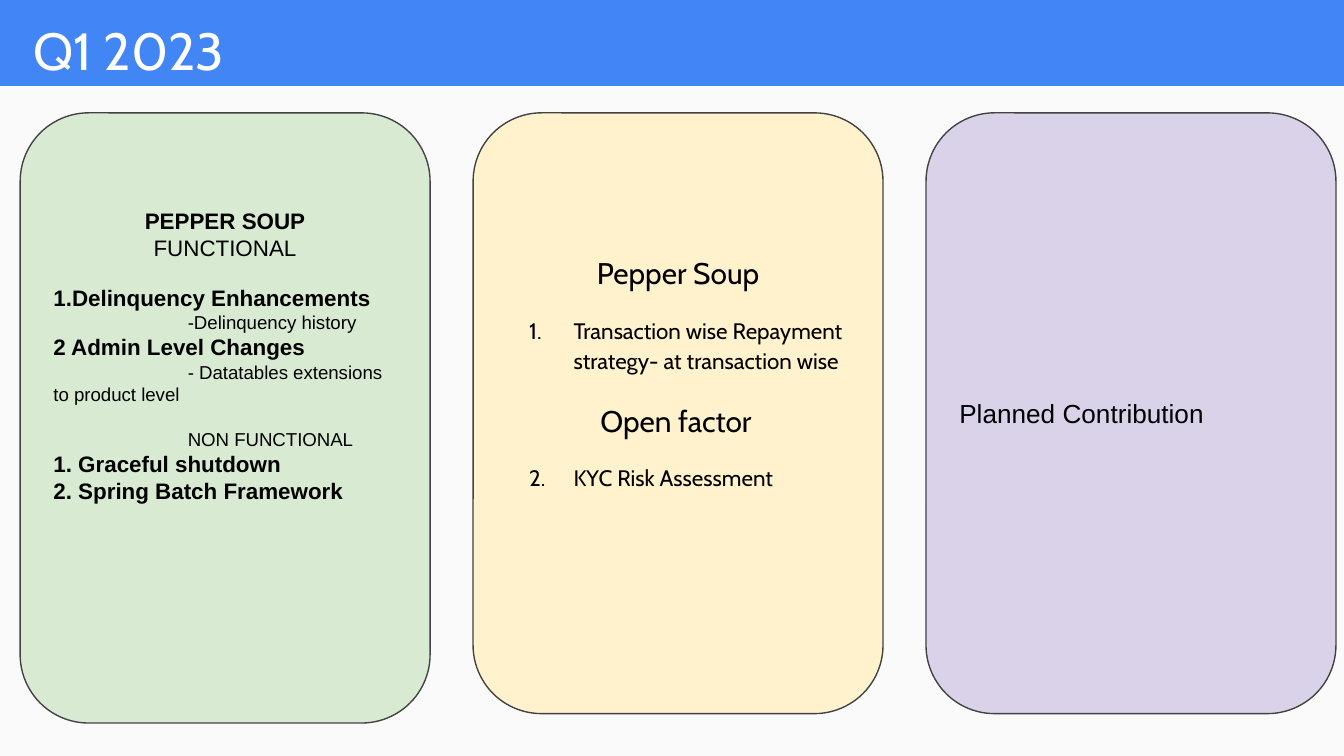
from dataclasses import dataclass

from lxml.etree import SubElement
from pptx import Presentation
from pptx.dml.color import RGBColor
from pptx.enum.shapes import MSO_SHAPE as Shape
from pptx.enum.text import MSO_ANCHOR as Anchor, PP_ALIGN as Align
from pptx.oxml.ns import qn
from pptx.util import Inches, Pt


@dataclass
class Line:
    text: str
    size: float = 12
    bold: bool = False
    font: str = "Arial"
    color: str = "000000"
    align: Align = Align.LEFT
    before: float = 0
    spacing: float = 1.0
    left: float = 0
    first: float = 0
    number: int = 0


def color(value):
    return RGBColor.from_string(value)


def write_lines(shape, lines, anchor, bottom=0.1):
    frame = shape.text_frame
    frame.word_wrap = True
    frame.vertical_anchor = anchor
    frame.margin_left = frame.margin_right = frame.margin_top = Inches(0.1)
    frame.margin_bottom = Inches(bottom)
    for index, line in enumerate(lines):
        paragraph = frame.add_paragraph() if index else frame.paragraphs[0]
        paragraph.alignment = line.align
        paragraph.line_spacing = line.spacing
        paragraph.space_before = Pt(line.before)
        properties = paragraph._p.get_or_add_pPr()
        properties.set("marL", str(Inches(line.left)))
        properties.set("indent", str(Inches(line.first)))
        if line.number:
            SubElement(properties, qn("a:buFont"), typeface="Cabin")
            SubElement(properties, qn("a:buAutoNum"), type="arabicPeriod",
                       startAt=str(line.number))
        run = paragraph.add_run()
        run.text = line.text
        run.font.size = Pt(line.size)
        run.font.bold = line.bold
        run.font.name = line.font
        run.font.color.rgb = color(line.color)


def add_box(slide, kind, box, fill):
    shape = slide.shapes.add_shape(kind, *map(Inches, box))
    shape.shadow.inherit = False
    shape.fill.solid()
    shape.fill.fore_color.rgb = color(fill)
    shape.line.fill.background()
    return shape


def add_backdrop(slide, box):
    # Blue background shows as the header band above the light body
    slide.background.fill.solid()
    slide.background.fill.fore_color.rgb = color("4285F4")
    add_box(slide, Shape.RECTANGLE, box, "FAFAFA")


def add_title(slide, box, text):
    title = slide.shapes.add_textbox(*map(Inches, box))
    write_lines(title, [Line(text, 28, font="Cabin", color="FFFFFF")], Anchor.BOTTOM)


def add_card(slide, box, fill, lines, bottom):
    card = add_box(slide, Shape.ROUNDED_RECTANGLE, box, fill)
    card.adjustments[0] = 0.167
    card.line.color.rgb = color("424242")
    card.line.width = Pt(0.75)
    write_lines(card, lines, Anchor.MIDDLE, bottom)


def heading(text, **options):
    return Line(text, bold=True, **options)


def detail(text, **options):
    return Line(text, 10, first=1, **options)


def cabin(text, size=12, **options):
    return Line(text, size, font="Cabin", spacing=1.15, **options)


def numbered(number, text):
    return cabin(text, number=number, before=12, left=0.5, first=-0.33)


DELIVERED = [
    heading("PEPPER SOUP", align=Align.CENTER),
    Line("FUNCTIONAL", align=Align.CENTER),
    heading("1.Delinquency Enhancements", before=12.5),
    detail("-Delinquency history"),
    heading("2 Admin Level Changes"),
    detail("- Datatables extensions to product level"),
    detail("NON FUNCTIONAL", before=12),
    heading("1. Graceful shutdown"),
    heading("2. Spring Batch Framework"),
]
IN_PROGRESS = [
    cabin("Pepper Soup", 16, align=Align.CENTER),
    numbered(1, "Transaction wise Repayment strategy- at transaction wise"),
    cabin("Open factor", 16, before=12, left=0.7),
    numbered(2, "KYC Risk Assessment"),
]
PLANNED = [Line("Planned Contribution", 14)]

# Fill, height, bottom inset and text of each card
CARDS = [
    ("D9EAD3", 4.54, 1.03, DELIVERED),
    ("FFF2CC", 4.47, 0.74, IN_PROGRESS),
    ("D9D2E9", 4.47, 0.1, PLANNED),
]
CARD_LEFT, CARD_TOP, CARD_WIDTH, CARD_STEP = 0.15, 0.84, 3.05, 3.37


def main():
    presentation = Presentation()
    presentation.slide_width = Inches(10)
    presentation.slide_height = Inches(10 * 9 / 16)
    slide = presentation.slides.add_slide(presentation.slide_layouts[6])

    add_backdrop(slide, (0, 0.64, 10, 4.99))
    add_title(slide, (0.15, -0.14, 8.99, 0.84), "Q1 2023")
    for index, (fill, height, bottom, lines) in enumerate(CARDS):
        box = (CARD_LEFT + index * CARD_STEP, CARD_TOP, CARD_WIDTH, height)
        add_card(slide, box, fill, lines, bottom)

    presentation.save("out.pptx")


if __name__ == "__main__":
    main()
